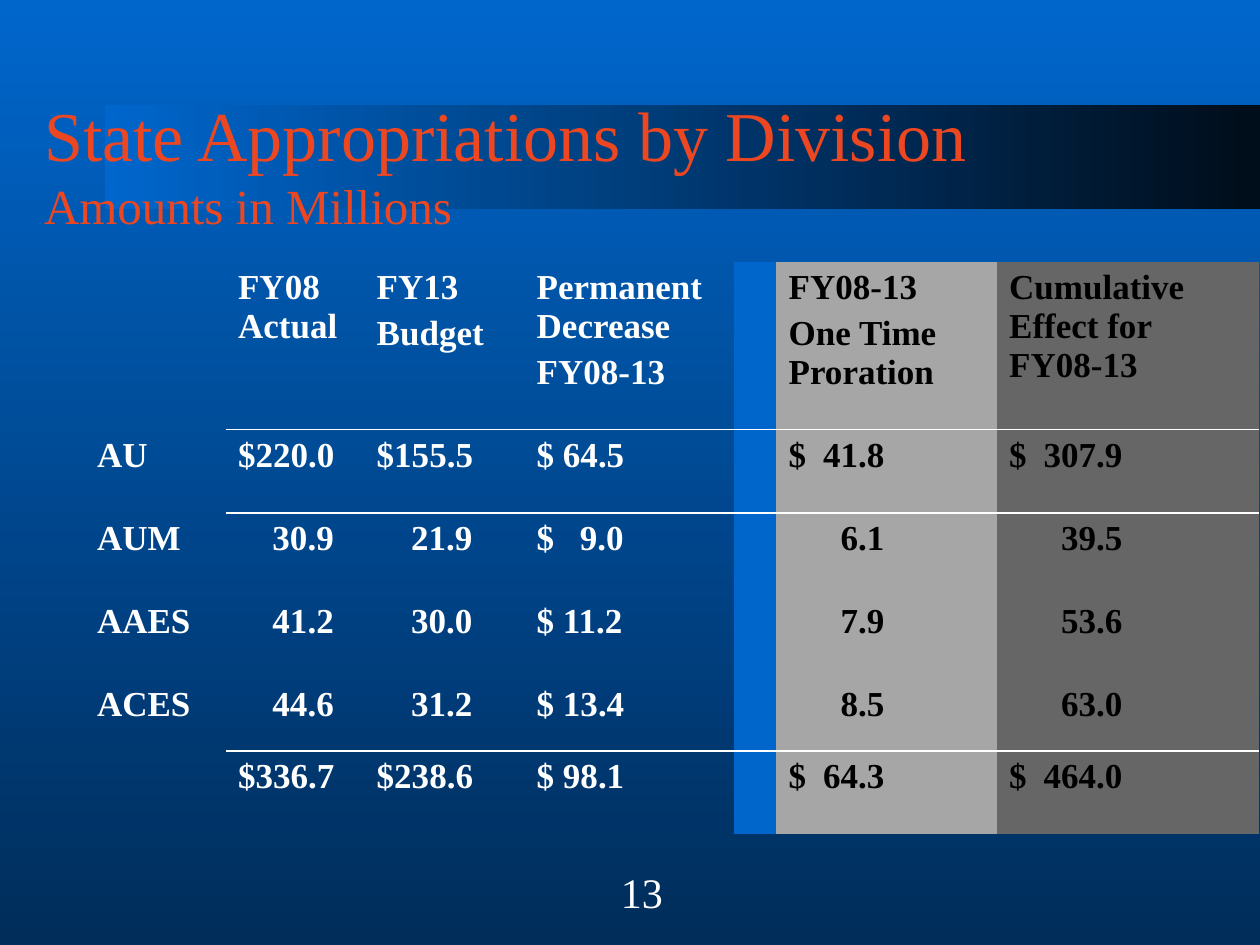
from lxml import etree
from pptx import Presentation
from pptx.dml.color import RGBColor
from pptx.enum.shapes import MSO_SHAPE
from pptx.enum.text import MSO_ANCHOR, PP_ALIGN
from pptx.oxml import parse_xml
from pptx.oxml.ns import nsdecls, qn
from pptx.util import Inches, Pt

BLUE = RGBColor(0x00, 0x66, 0xCC)
NAVY = RGBColor(0x00, 0x2D, 0x5A)
MIDNIGHT = RGBColor(0x00, 0x0D, 0x1A)
ORANGE = RGBColor(0xED, 0x47, 0x22)
WHITE = RGBColor(0xFF, 0xFF, 0xFF)
BLACK = RGBColor(0x00, 0x00, 0x00)
LIGHT_GRAY = RGBColor(0xA6, 0xA6, 0xA6)
DARK_GRAY = RGBColor(0x66, 0x66, 0x66)

PLAIN_TABLE_STYLE = "{2D5ABB26-0587-4C30-8999-92F81FD0307C}"

# Width, fill, text colour and right tab stop of each column
COLUMNS = [
    (1.12, None, WHITE, None),
    (1.10, None, WHITE, 0.76),
    (1.27, None, WHITE, 0.76),
    (1.67, None, WHITE, 0.69),
    (0.33, BLUE, WHITE, None),
    (1.75, LIGHT_GRAY, BLACK, 0.76),
    (2.08, DARK_GRAY, BLACK, 0.90),
]
ROW_HEIGHTS = [1.33, 0.66, 0.66, 0.66, 0.57, 0.66]
APPROPRIATIONS = [
    ["", "FY08 Actual", "FY13\nBudget", "Permanent Decrease\nFY08-13", "",
     "FY08-13\nOne Time Proration", "Cumulative Effect for FY08-13"],
    ["AU", "$220.0", "$155.5", "$ 64.5", "", "$\t41.8", "$\t307.9"],
    ["AUM", "\t30.9", "\t21.9", "$\t9.0", "", "\t6.1", "\t39.5"],
    ["AAES", "\t41.2", "\t30.0", "$ 11.2", "", "\t7.9", "\t53.6"],
    ["ACES", "\t44.6", "\t31.2", "$ 13.4", "", "\t8.5", "\t63.0"],
    ["", "$336.7", "$238.6", "$ 98.1", "", "$\t64.3", "$\t464.0"],
]
RULED_ROWS = (0, 4)


class SlideBuilder:
    font_name = "Times New Roman"

    def __init__(self, slide):
        self.slide = slide

    def style(self, font, size, color, bold=False):
        font.name = self.font_name
        font.size = Pt(size)
        font.bold = bold
        font.color.rgb = color

    def gradient(self, fill, start, end, angle):
        fill.gradient()
        fill.gradient_angle = angle
        for stop, color, position in zip(fill.gradient_stops, (start, end), (0, 1)):
            stop.color.rgb = color
            stop.position = position

    def band(self, left, top, width, height):
        """Draw the gradient band behind everything else."""
        band = self.slide.shapes.add_shape(
            MSO_SHAPE.RECTANGLE, Inches(left), Inches(top), Inches(width), Inches(height))
        band.shadow.inherit = False
        band.line.fill.background()
        self.gradient(band.fill, BLUE, MIDNIGHT, 0)
        self.slide.shapes._spTree.insert(2, band._element)

    def title(self, heading, subheading):
        title = self.slide.shapes.title
        title.left, title.top = Inches(0.25), Inches(0.67)
        title.width, title.height = Inches(9), Inches(1.25)
        title.text_frame.vertical_anchor = MSO_ANCHOR.MIDDLE
        paragraph = title.text_frame.paragraphs[0]
        paragraph.alignment = PP_ALIGN.LEFT
        for text, size in ((heading, 40), (subheading, 28)):
            run = paragraph.add_run()
            run.text = text
            self.style(run.font, size, ORANGE)
            if text == heading:
                paragraph.add_line_break()

    def table(self, left, top):
        frame = self.slide.shapes.add_table(
            len(ROW_HEIGHTS), len(COLUMNS), Inches(left), Inches(top),
            Inches(sum(column[0] for column in COLUMNS)), Inches(sum(ROW_HEIGHTS)))
        table = frame.table
        table.first_row = table.horz_banding = False
        table._tbl.tblPr.find(qn("a:tableStyleId")).text = PLAIN_TABLE_STYLE
        for row, height in zip(table.rows, ROW_HEIGHTS):
            row.height = Inches(height)
        for column, (width, *_) in zip(table.columns, COLUMNS):
            column.width = Inches(width)
        for r, texts in enumerate(APPROPRIATIONS):
            for c, (text, (_, fill, color, tab)) in enumerate(zip(texts, COLUMNS)):
                cell = table.cell(r, c)
                self.cell(cell, text, fill, color, tab)
                if c > 0 and r in RULED_ROWS:
                    self.rule(cell, "lnB")
                    self.rule(table.cell(r + 1, c), "lnT")

    def cell(self, cell, text, fill, color, tab):
        if fill is None:
            cell.fill.background()
        else:
            cell.fill.solid()
            cell.fill.fore_color.rgb = fill
        cell.text = text
        for index, paragraph in enumerate(cell.text_frame.paragraphs):
            if index:
                paragraph.space_before = Pt(4)
            if "\t" in text:
                tabs = etree.SubElement(paragraph._p.get_or_add_pPr(), qn("a:tabLst"))
                etree.SubElement(tabs, qn("a:tab"), pos=str(Inches(tab)), algn="r")
            self.style(paragraph.font, 20, color, bold=True)

    def rule(self, cell, edge):
        """Put a thin white border on one edge of a cell."""
        border = parse_xml(
            f'<a:{edge} {nsdecls("a")} w="{Pt(1)}"><a:solidFill>'
            f'<a:srgbClr val="{WHITE}"/></a:solidFill></a:{edge}>')
        properties = cell._tc.get_or_add_tcPr()
        position = 1 if edge == "lnB" and properties.find(qn("a:lnT")) is not None else 0
        properties.insert(position, border)

    def page_number(self, number):
        box = self.slide.shapes.add_textbox(
            Inches(4.83), Inches(6.83), Inches(0.75), Inches(0.5))
        box.text_frame.word_wrap = True
        box.text_frame.text = number
        self.style(box.text_frame.paragraphs[0].font, 24, WHITE)


def main():
    presentation = Presentation()
    presentation.slide_width = Inches(10)
    presentation.slide_height = Inches(7.5)
    slide = presentation.slides.add_slide(presentation.slide_layouts[5])
    builder = SlideBuilder(slide)
    builder.gradient(slide.background.fill, BLUE, NAVY, 270)
    builder.band(0.83, 0.83, 9.17, 0.83)
    builder.title("State Appropriations by Division", "Amounts in Millions")
    builder.table(0.67, 2.08)
    builder.page_number("13")
    presentation.save("out.pptx")


if __name__ == "__main__":
    main()
